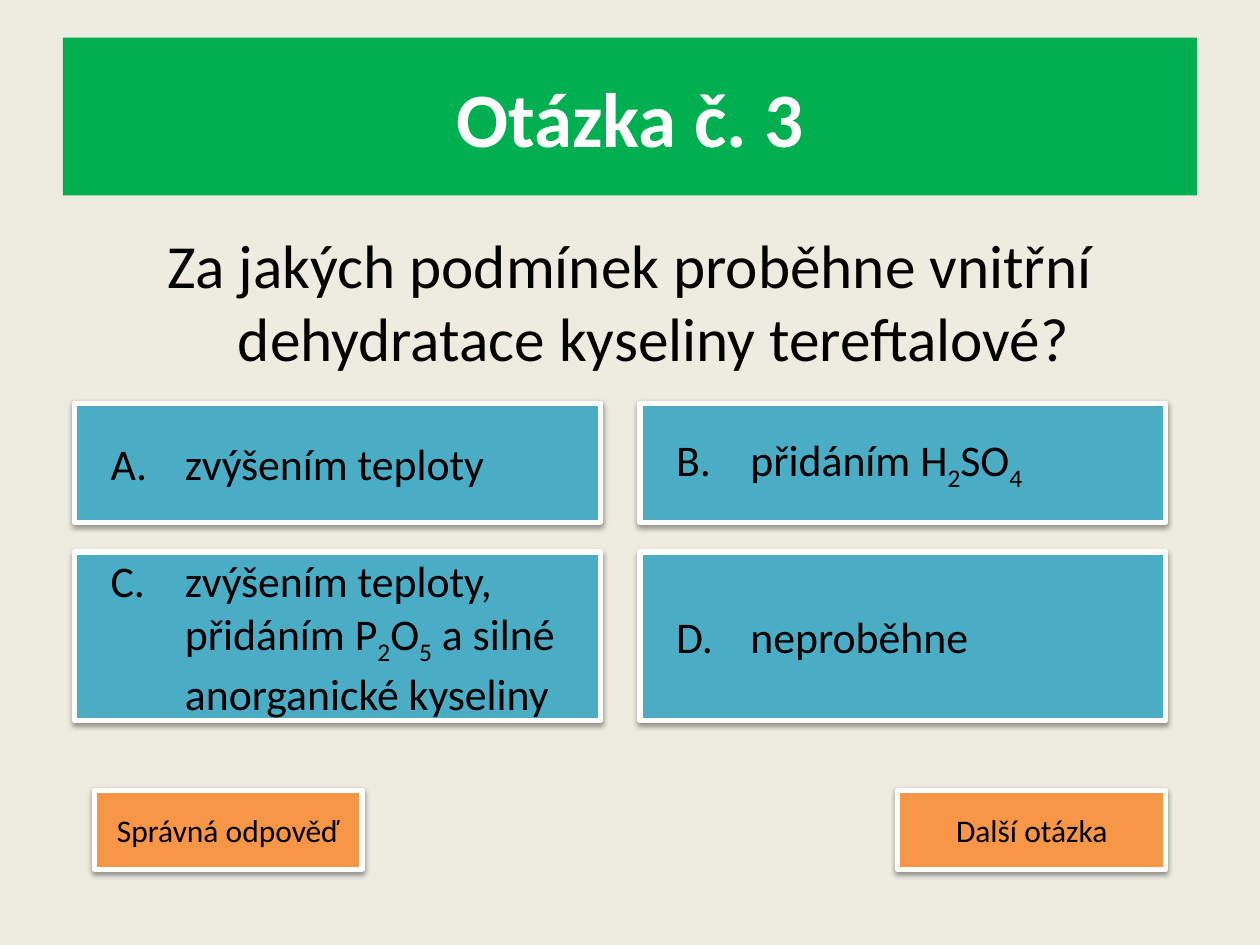
import pptx
import pptx.util
import pptx.dml.color
import pptx.enum.shapes
import pptx.enum.text
import pptx.oxml
import pptx.oxml.ns
from dataclasses import dataclass

Cm, Pt = pptx.util.Cm, pptx.util.Pt
RGB = pptx.dml.color.RGBColor.from_string
ALIGN = pptx.enum.text.PP_ALIGN
ANCHOR = pptx.enum.text.MSO_ANCHOR


@dataclass(frozen=True)
class Theme:
    font: str = "Calibri"
    background: str = "EEECE1"
    banner: str = "00B050"
    answer: str = "4BACC6"
    button: str = "F79646"
    light: str = "FFFFFF"
    dark: str = "000000"
    title_size: int = 44
    question_size: int = 35
    answer_size: int = 25
    button_size: int = 18


THEME = Theme()
SHADOW = (
    '<a:outerShdw xmlns:a="http://schemas.openxmlformats.org/drawingml/2006/main" '
    'blurRad="40000" dist="20000" dir="5400000" rotWithShape="0">'
    '<a:srgbClr val="000000"><a:alpha val="38000"/></a:srgbClr></a:outerShdw>'
)


def add_run(p, text, size, color=THEME.dark, bold=False, subscript=False):
    r = p.add_run()
    r.text = text
    r.font.name = THEME.font
    r.font.size = Pt(size)
    r.font.bold = bold
    r.font.color.rgb = RGB(color)
    if subscript:
        r._r.get_or_add_rPr().set("baseline", "-25000")


def set_hanging(p, margin, indent):
    pPr = p._p.get_or_add_pPr()
    pPr.set("marL", str(Cm(margin)))
    pPr.set("indent", str(Cm(indent)))


def add_panel(s, box, fill):
    """Plain filled rectangle with vertically centred text."""
    sp = s.shapes.add_shape(pptx.enum.shapes.MSO_SHAPE.RECTANGLE, *map(Cm, box))
    sp.shadow.inherit = False
    sp.fill.solid()
    sp.fill.fore_color.rgb = RGB(fill)
    sp.line.fill.background()
    tf = sp.text_frame
    tf.word_wrap = True
    tf.vertical_anchor = ANCHOR.MIDDLE
    return sp


def add_card(s, box, fill):
    """Panel with a white frame and a soft shadow."""
    sp = add_panel(s, box, fill)
    sp.line.color.rgb = RGB(THEME.light)
    sp.line.width = Pt(3)
    effects = sp._element.spPr.find(pptx.oxml.ns.qn("a:effectLst"))
    effects.append(pptx.oxml.parse_xml(SHADOW))
    return sp


def add_title(s, box, text):
    p = add_panel(s, box, THEME.banner).text_frame.paragraphs[0]
    p.alignment = ALIGN.CENTER
    add_run(p, text, THEME.title_size, THEME.light, bold=True)


def add_question(s, box, text):
    tf = s.shapes.add_textbox(*map(Cm, box)).text_frame
    tf.word_wrap = True
    p = tf.paragraphs[0]
    p.alignment = ALIGN.CENTER
    p.space_before = Pt(3)
    set_hanging(p, 0.95, -0.95)
    add_run(p, text, THEME.question_size)


def add_answers(s, box, answers, row_heights, gap_x, gap_y):
    """Two-column grid; digits in an answer are set as subscripts."""
    left, top, width = box
    card_w = (width - gap_x) / 2
    for i, parts in enumerate(answers):
        row, col = divmod(i, 2)
        y = top + sum(row_heights[:row]) + row * gap_y
        x = left + col * (card_w + gap_x)
        sp = add_card(s, (x, y, card_w, row_heights[row]), THEME.answer)
        p = sp.text_frame.paragraphs[0]
        p.alignment = ALIGN.LEFT
        set_hanging(p, 1.98, -1.5)
        add_run(p, f"{'ABCD'[i]}.\t", THEME.answer_size)
        for part in parts:
            add_run(p, part, THEME.answer_size, subscript=part.isdigit())


def add_buttons(s, box, labels, button_w):
    """Buttons spread evenly from the left to the right edge of the box."""
    left, top, width, height = box
    step = (width - button_w) / (len(labels) - 1)
    for i, label in enumerate(labels):
        sp = add_card(s, (left + i * step, top, button_w, height), THEME.button)
        p = sp.text_frame.paragraphs[0]
        p.alignment = ALIGN.CENTER
        add_run(p, label, THEME.button_size)


def main():
    prs = pptx.Presentation()
    prs.slide_width, prs.slide_height = Cm(25.4), Cm(19.05)
    s = prs.slides.add_slide(prs.slide_layouts[6])
    s.background.fill.solid()
    s.background.fill.fore_color.rgb = RGB(THEME.background)

    # Heading and question
    add_title(s, (1.27, 0.76, 22.86, 3.18), "Otázka č. 3")
    add_question(s, (1.27, 4.45, 22.86, 11.48),
                 "Za jakých podmínek proběhne vnitřní dehydratace kyseliny tereftalové?")

    # Answer grid
    answers = [
        ["zvýšením teploty"],
        ["přidáním H", "2", "SO", "4"],
        ["zvýšením teploty, přidáním P", "2", "O", "5", " a silné anorganické kyseliny"],
        ["neproběhne"],
    ]
    add_answers(s, (1.5, 8.13, 22), answers, row_heights=(2.4, 3.4), gap_x=0.8, gap_y=0.6)

    # Navigation
    add_buttons(s, (1.9, 15.93, 21.6, 1.6), ["Správná odpověď", "Další otázka"], button_w=5.4)

    prs.save("out.pptx")


if __name__ == "__main__":
    main()
